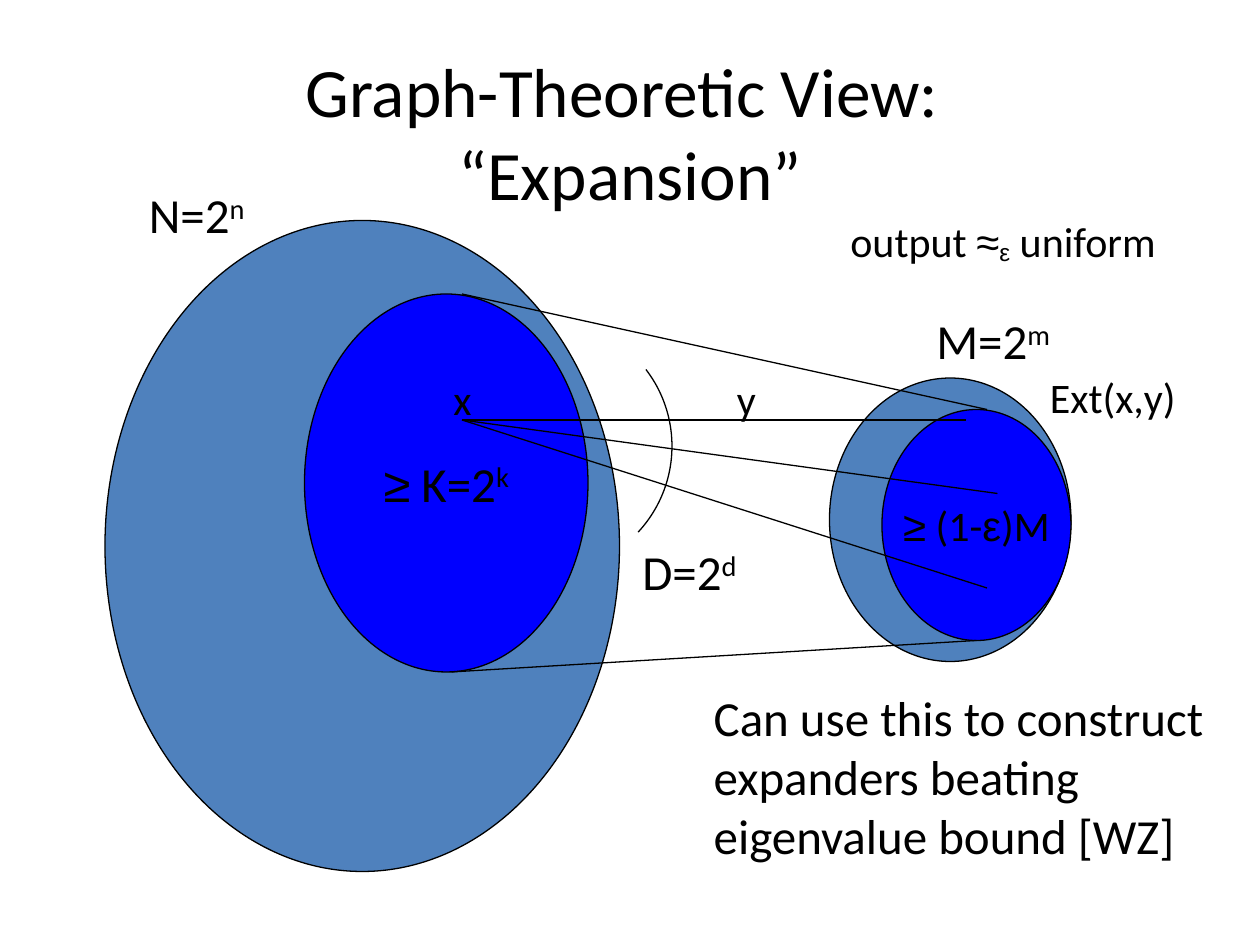
"""Build a slide on extractors seen as expanding bipartite graphs."""
from dataclasses import dataclass

from lxml import etree
from pptx import Presentation
from pptx import util as u
from pptx.dml.color import RGBColor
from pptx.enum import shapes, text
from pptx.oxml.ns import qn

BLACK = RGBColor(0, 0, 0)
STEEL = RGBColor(0x4F, 0x81, 0xBD)
BLUE = RGBColor(0, 0, 0xFF)
WIDE, HIGH = u.Inches(10), u.Inches(7.5)
COLS, ROWS = 120, 90


@dataclass
class Run:
    words: str
    face: str = "Calibri"
    base: int = 0


@dataclass
class Oval:
    box: tuple
    fill: RGBColor
    size: float = 0
    runs: tuple = ()


@dataclass
class Label:
    box: tuple
    size: float
    lines: tuple
    wrap: bool = False


@dataclass
class Edge:
    start: tuple
    end: tuple


def place(*cells: float) -> list:
    """Turn alternating columns and rows into lengths."""
    steps = (WIDE / COLS, HIGH / ROWS)
    return [round(cell * steps[i % 2]) for i, cell in enumerate(cells)]


def write(para, runs: tuple, size: float) -> None:
    """Add each run to a paragraph."""
    for item in runs:
        run = para.add_run()
        run.text = item.words
        font = run.font
        font.size, font.name = u.Pt(size), item.face
        font.color.rgb = BLACK
        if item.base:
            run._r.get_or_add_rPr().set("baseline", str(item.base * 1000))


def ink(line) -> None:
    """Give a line the thin black stroke."""
    line.color.rgb = BLACK
    line.width = u.Pt(0.75)


def draw_oval(slide, oval: Oval) -> None:
    """Draw a vertex set with its optional caption."""
    shape = slide.shapes.add_shape(shapes.MSO_SHAPE.OVAL, *place(*oval.box))
    shape.shadow.inherit = False
    shape.fill.solid()
    shape.fill.fore_color.rgb = oval.fill
    ink(shape.line)
    if oval.runs:
        frame = shape.text_frame
        frame.word_wrap = False
        frame.vertical_anchor = text.MSO_ANCHOR.MIDDLE
        para = frame.paragraphs[0]
        para.alignment = text.PP_ALIGN.CENTER
        write(para, oval.runs, oval.size)


def draw_edge(slide, edge: Edge) -> None:
    """Draw a straight edge without a shadow."""
    line = slide.shapes.add_connector(
        shapes.MSO_CONNECTOR.STRAIGHT, *place(*edge.start, *edge.end))
    ink(line.line)
    etree.SubElement(line._element.spPr, qn("a:effectLst"))


def draw_label(slide, label: Label) -> None:
    """Draw a text box, one paragraph for each line."""
    frame = slide.shapes.add_textbox(*place(*label.box)).text_frame
    frame.word_wrap = label.wrap
    frame.auto_size = text.MSO_AUTO_SIZE.SHAPE_TO_FIT_TEXT
    for i, runs in enumerate(label.lines):
        para = frame.add_paragraph() if i else frame.paragraphs[0]
        write(para, runs, label.size)


def draw_arc(slide, box: tuple, start: float, end: float) -> None:
    """Draw an open arc between two angles in degrees."""
    arc = slide.shapes.add_shape(shapes.MSO_SHAPE.ARC, *place(*box))
    arc.shadow.inherit = False
    arc.fill.background()
    ink(arc.line)
    for i, angle in enumerate((start, end)):
        arc.adjustments[i] = angle * 0.6


def draw_title(slide, lines: tuple, size: float) -> None:
    """Fill and move the title placeholder."""
    title = slide.shapes.title
    title.left, title.top, title.width, title.height = place(9, 5, 102, 15)
    frame = title.text_frame
    frame.auto_size = text.MSO_AUTO_SIZE.NONE
    frame.vertical_anchor = text.MSO_ANCHOR.MIDDLE
    para = frame.paragraphs[0]
    para.alignment = text.PP_ALIGN.CENTER
    for i, words in enumerate(lines):
        if i:
            para.add_line_break()
        write(para, (Run(words),), size)


def power(name: str, top: str) -> tuple:
    """Return the runs of a size given as a power of two."""
    return Run(f"{name}=2"), Run(top, base=30)


HUB = (44, 40)
OVALS = (
    Oval((79, 36, 23, 27), STEEL),
    Oval((84, 39, 18, 22), BLUE, 24,
         (Run("≥", "Arial"), Run(" (1-"), Run("ε", "Arial"), Run(")M"))),
    Oval((10, 21, 49, 62), STEEL),
    Oval((29, 28, 27, 36), BLUE, 28, (Run("≥", "Arial"), *power(" K", "k"))),
)
EDGES = (
    Edge(HUB, (92, 40)),
    Edge(HUB, (95, 47)),
    Edge(HUB, (94, 56)),
    Edge((43, 64), (93, 61)),
    Edge((44, 28), (94, 39)),
)
LABELS = (
    Label((60, 51, 14, 6.8), 28, (power("D", "d"),), True),
    Label((13, 17, 13, 6.8), 28, (power("N", "n"),), True),
    Label((88, 29, 16, 6.8), 28, (power("M", "m"),), True),
    Label((66.8, 64.9, 49.7, 18.1), 28, (
        (Run("Can use this to construct"),),
        (Run("expanders beating"),),
        (Run("eigenvalue bound [WZ]"),))),
    Label((42, 35, 4.4, 6), 24, ((Run("x"),),)),
    Label((69, 35, 5, 6), 24, ((Run("y"),),), True),
    Label((98.8, 34.8, 15.6, 6), 24, ((Run("Ext(x,y)"),),)),
    Label((79.8, 19.9, 32.5, 6), 24, (
        (Run("output "), Run("≈", "Arial"), Run("ε", "Arial", -10),
         Run(" uniform")),)),
)


def main() -> None:
    """Build and save the slide."""
    deck = Presentation()
    deck.slide_width, deck.slide_height = WIDE, HIGH
    slide = deck.slides.add_slide(deck.slide_layouts[5])
    draw_title(slide, ("Graph-Theoretic View: ", "“Expansion”"), 39.6)
    for oval in OVALS:
        draw_oval(slide, oval)
    for edge in EDGES:
        draw_edge(slide, edge)
    draw_arc(slide, (40, 30.5, 24, 24), 322.5, 43)
    for label in LABELS:
        draw_label(slide, label)
    deck.save("out.pptx")


if __name__ == "__main__":
    main()
